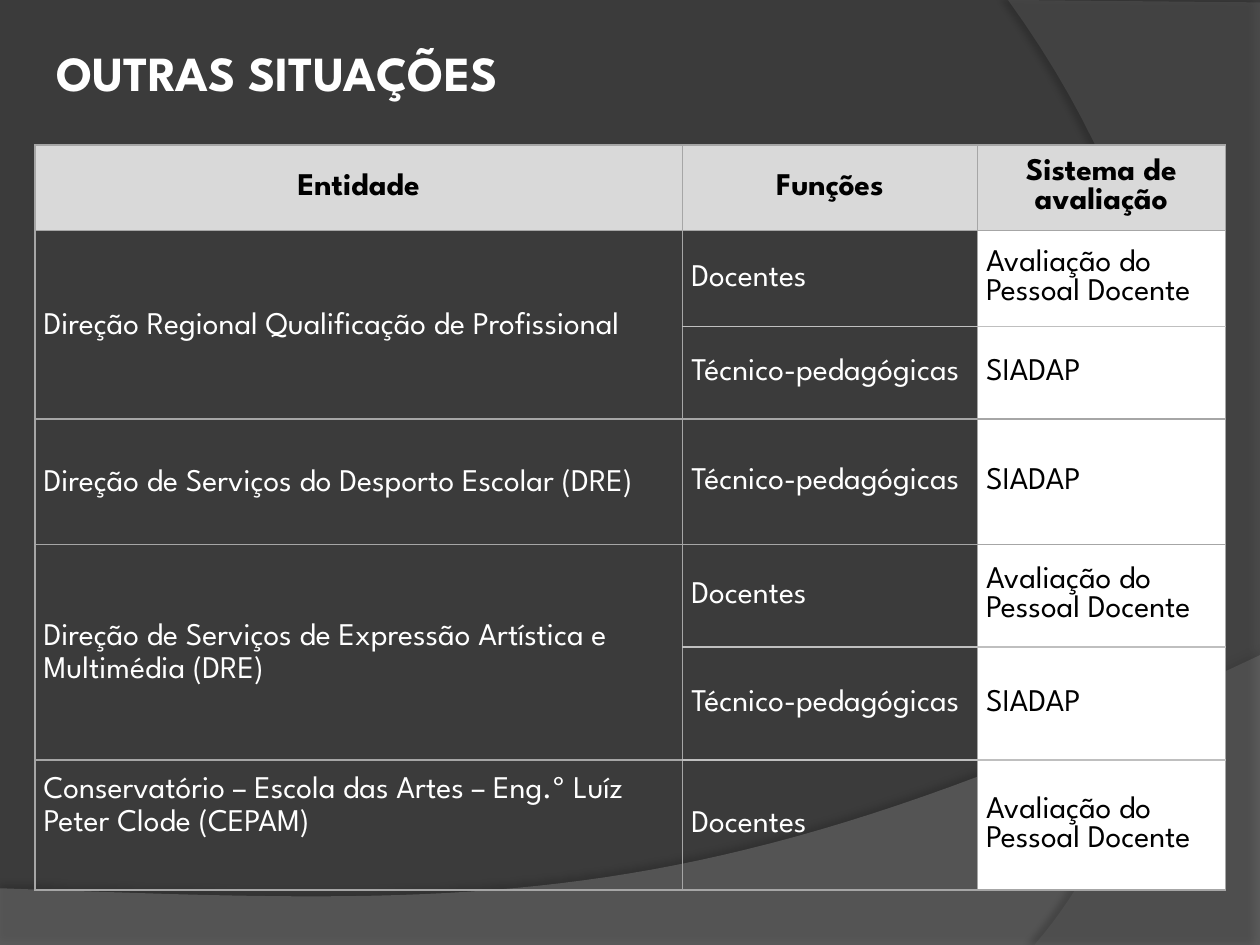
from dataclasses import dataclass

from lxml import etree
from pptx import Presentation
from pptx import util as u
from pptx.dml.color import RGBColor
from pptx.enum import text
from pptx.oxml import ns

Pt = u.Pt
Point = tuple[float, float]
FONT = "League Spartan"
WHITE = RGBColor(0xFF, 0xFF, 0xFF)
BLACK = RGBColor(0, 0, 0)
BACKGROUND = RGBColor(0x3B, 0x3B, 0x3B)
LOW_WAVE = RGBColor(0x7F, 0x7F, 0x7F)
SIDE_WAVE = RGBColor(0x5E, 0x5E, 0x5E)
HEADER = RGBColor(0xD9, 0xD9, 0xD9)
BORDER = RGBColor(0xA6, 0xA6, 0xA6)
SOFT_BORDER = RGBColor(0xBF, 0xBF, 0xBF)
CURVE_STEPS = 48


@dataclass(frozen=True)
class Wave:
    corners: list[Point]
    controls: tuple[Point, Point]
    end: Point
    color: RGBColor
    opacity: int
    shadow_opacity: int
    shadow_distance: float
    shadow_angle: int


@dataclass(frozen=True)
class Entry:
    entity: str
    role: str
    system: str
    height: float


WAVES = [
    Wave([(0, 507.6), (0, 540), (720, 540), (720, 374.4)],
         ((402.5, 524.9), (281.5, 517.7)), (0, 507.6), LOW_WAVE, 45, 35, 3.5, 270),
    Wave([(720, 1.4), (720, 540), (591.1, 540)],
         ((673.2, 445.7), (733, 216)), (576, 0), SIDE_WAVE, 40, 45, 4, 180),
]
TEACHING, TECHNICAL = "Docentes", "Técnico-pedagógicas"
TEACHER_REVIEW, SIADAP = "Avaliação do Pessoal Docente", "SIADAP"
ENTRIES = [
    Entry("Entidade", "Funções", "Sistema de avaliação", 49),
    Entry("Direção Regional Qualificação de Profissional", TEACHING, TEACHER_REVIEW, 54.7),
    Entry("", TECHNICAL, SIADAP, 53),
    Entry("Direção de Serviços do Desporto Escolar (DRE)", TECHNICAL, SIADAP, 71.8),
    Entry("Direção de Serviços de Expressão Artística e Multimédia (DRE)",
          TEACHING, TEACHER_REVIEW, 58.5),
    Entry("", TECHNICAL, SIADAP, 64.6),
    Entry("Conservatório – Escola das Artes – Eng.º Luíz Peter Clode (CEPAM)",
          TEACHING, TEACHER_REVIEW, 74.4),
]
COLUMN_WIDTHS = [370.2, 168.4, 141.8]
SOFT_BOTTOM_ROWS = {1, 4, 5}
LAST_ENTITY_BOTTOM = 23


def add_node(parent, tag: str, **attributes):
    values = {key: str(value) for key, value in attributes.items()}
    return etree.SubElement(parent, ns.qn(tag), values)


def curve_points(start: Point, wave: Wave) -> list[Point]:
    first, second = wave.controls
    points = []
    for step in range(1, CURVE_STEPS + 1):
        t = step / CURVE_STEPS
        weights = ((1 - t) ** 3, 3 * t * (1 - t) ** 2, 3 * t * t * (1 - t), t ** 3)
        anchors = (start, first, second, wave.end)
        points.append(tuple(sum(w * p[axis] for w, p in zip(weights, anchors))
                            for axis in (0, 1)))
    return points


def draw_wave(page, wave: Wave) -> None:
    points = wave.corners + curve_points(wave.corners[-1], wave)
    builder = page.shapes.build_freeform(Pt(points[0][0]), Pt(points[0][1]))
    builder.add_line_segments([(Pt(x), Pt(y)) for x, y in points[1:]], close=True)
    shape = builder.convert_to_shape()
    shape.shadow.inherit = False
    shape.line.fill.background()
    shape.fill.solid()
    shape.fill.fore_color.rgb = wave.color
    properties = shape._element.spPr
    color = properties.find(ns.qn("a:solidFill"))[0]
    add_node(color, "a:alpha", val=wave.opacity * 1000)
    effects = properties.find(ns.qn("a:effectLst"))
    shadow = add_node(effects, "a:outerShdw", blurRad=Pt(4),
                      dist=Pt(wave.shadow_distance), dir=wave.shadow_angle * 60000,
                      algn="ctr", rotWithShape=0)
    shade = add_node(shadow, "a:srgbClr", val=BLACK)
    add_node(shade, "a:alpha", val=wave.shadow_opacity * 1000)


def write(para, words: str, size: float, color: RGBColor, bold: bool) -> None:
    span = para.add_run()
    span.text = words
    span.font.color.rgb = color
    for name, value in {"name": FONT, "size": Pt(size), "bold": bold}.items():
        setattr(span.font, name, value)


def draw_borders(cell, row: int, column: int) -> None:
    inner = column > 0
    top = SOFT_BORDER if inner and row - 1 in SOFT_BOTTOM_ROWS else BORDER
    bottom = SOFT_BORDER if inner and row in SOFT_BOTTOM_ROWS else BORDER
    properties = cell._tc.get_or_add_tcPr()
    sides = {"a:lnL": BORDER, "a:lnR": BORDER, "a:lnT": top, "a:lnB": bottom}
    for tag, color in sides.items():
        line = add_node(properties, tag, w=Pt(1))
        add_node(add_node(line, "a:solidFill"), "a:srgbClr", val=color)


def draw_cell(cell, words: str, row: int, column: int) -> None:
    header, last_entity = row == 0, row == len(ENTRIES) - 1 and column == 0
    layout = {
        "margin_left": Pt(5), "margin_right": Pt(5), "margin_top": Pt(0),
        "margin_bottom": Pt(LAST_ENTITY_BOTTOM if last_entity else 0),
        "vertical_anchor": text.MSO_ANCHOR.MIDDLE,
    }
    for name, value in layout.items():
        setattr(cell, name, value)
    draw_borders(cell, row, column)
    if header or column == 2:
        cell.fill.solid()
        cell.fill.fore_color.rgb = HEADER if header else WHITE
    else:
        cell.fill.background()
    if not words:
        return
    para = cell.text_frame.paragraphs[0]
    para.alignment = text.PP_ALIGN.CENTER if header else text.PP_ALIGN.LEFT
    if column == 0 and not header:
        para.line_spacing = 1.15
    write(para, words, 18, BLACK if header or column == 2 else WHITE, header)


def draw_table(page) -> None:
    frame = page.shapes.add_table(len(ENTRIES), len(COLUMN_WIDTHS), Pt(19.9), Pt(82.8),
                                  Pt(sum(COLUMN_WIDTHS)),
                                  Pt(sum(entry.height for entry in ENTRIES)))
    table = frame.table
    table.horz_banding = False
    for column, width in zip(table.columns, COLUMN_WIDTHS):
        column.width = Pt(width)
    for row, entry in enumerate(ENTRIES):
        table.rows[row].height = Pt(entry.height)
        for column, words in enumerate((entry.entity, entry.role, entry.system)):
            draw_cell(table.cell(row, column), words, row, column)
        if not entry.entity:
            table.cell(row - 1, 0).merge(table.cell(row, 0))


def draw_title(page) -> None:
    box = page.shapes.add_textbox(Pt(25.2), Pt(20.9), Pt(668.9), Pt(41))
    box.text_frame.word_wrap = True
    para = box.text_frame.paragraphs[0]
    para.alignment = text.PP_ALIGN.JUSTIFY
    write(para, "OUTRAS SITUAÇÕES", 28, WHITE, True)


def main() -> None:
    deck = Presentation()
    deck.slide_width, deck.slide_height = Pt(720), Pt(540)
    page = deck.slides.add_slide(deck.slide_layouts[6])
    page.background.fill.solid()
    page.background.fill.fore_color.rgb = BACKGROUND
    for wave in WAVES:
        draw_wave(page, wave)
    draw_title(page)
    draw_table(page)
    deck.save("out.pptx")


if __name__ == "__main__":
    main()
